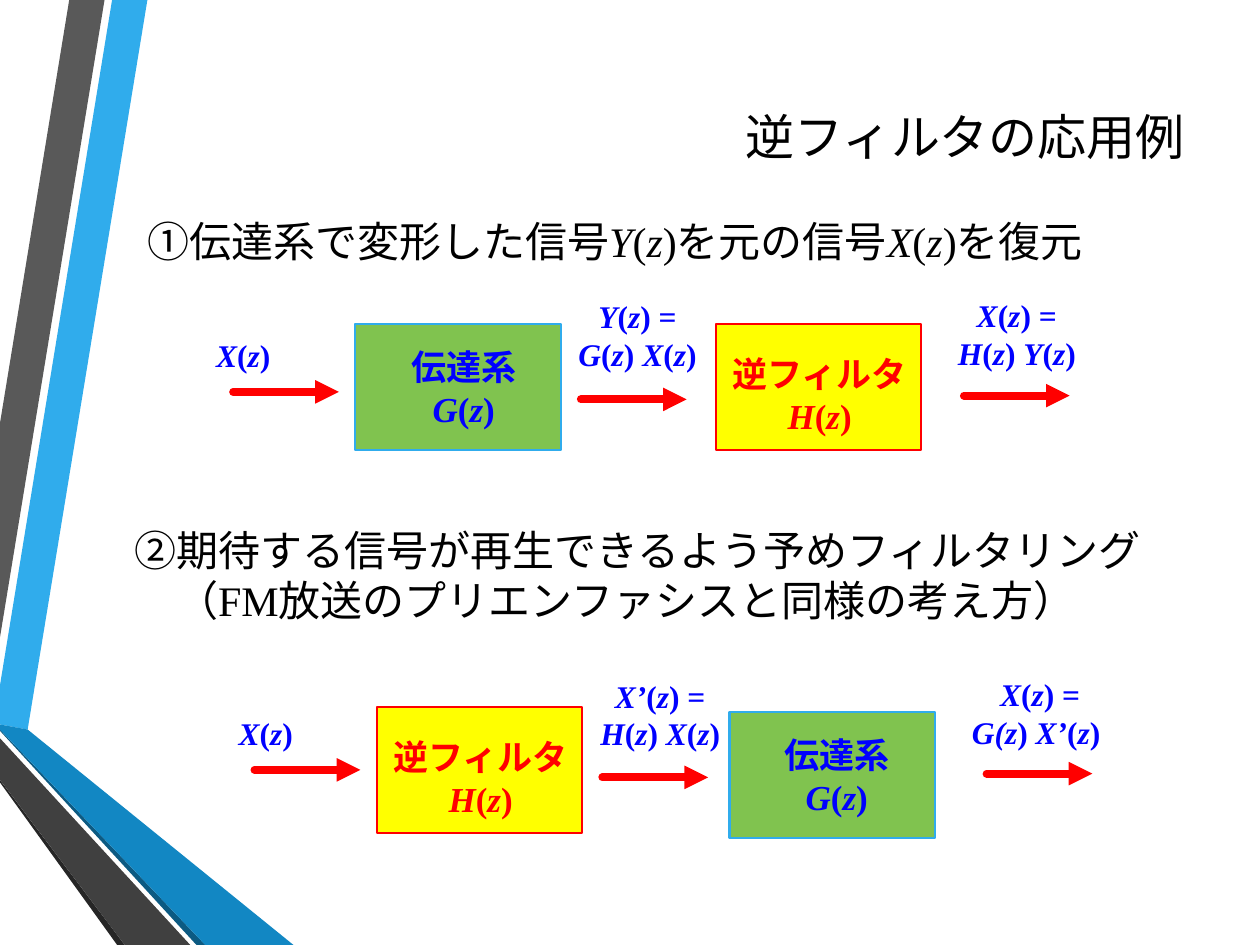
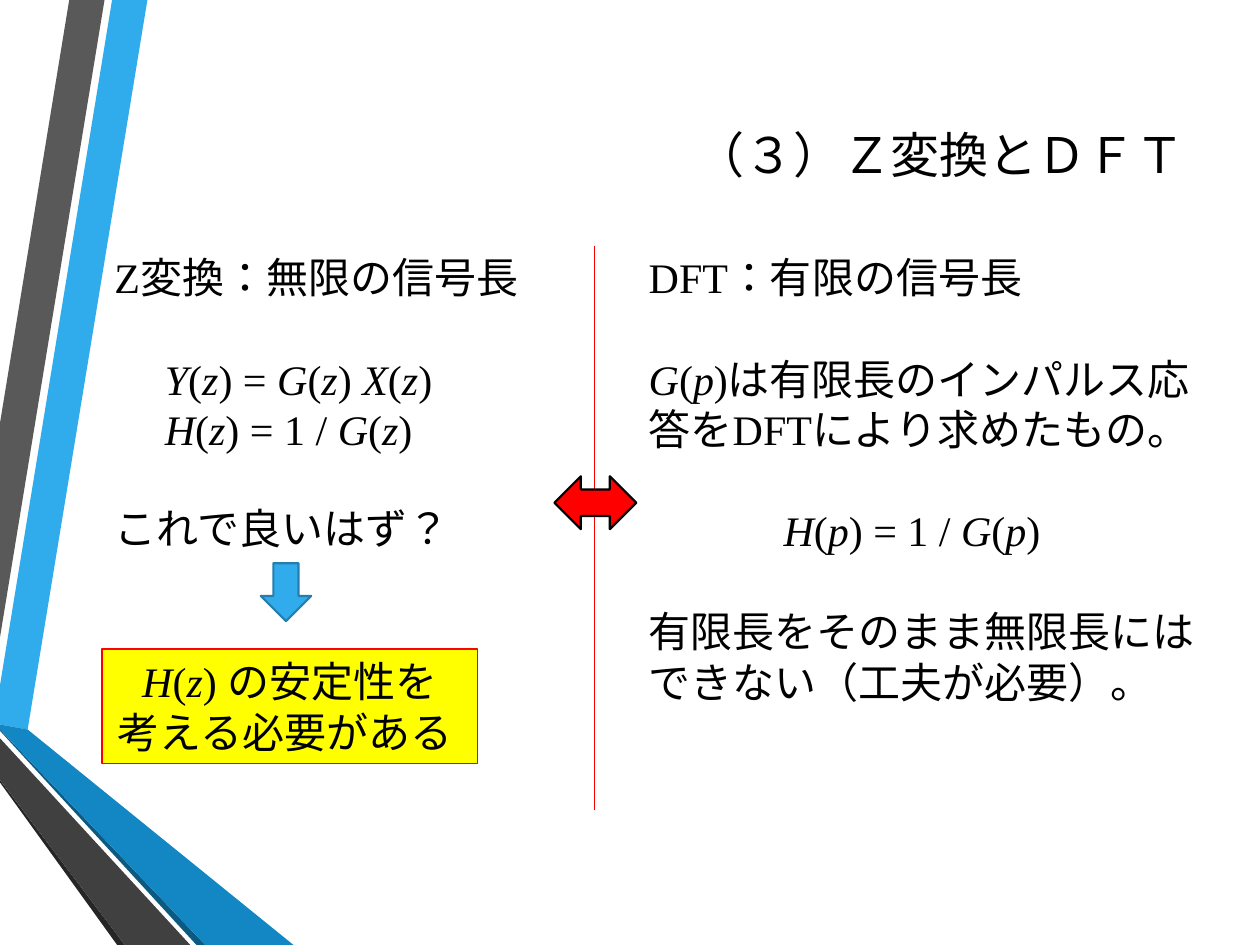
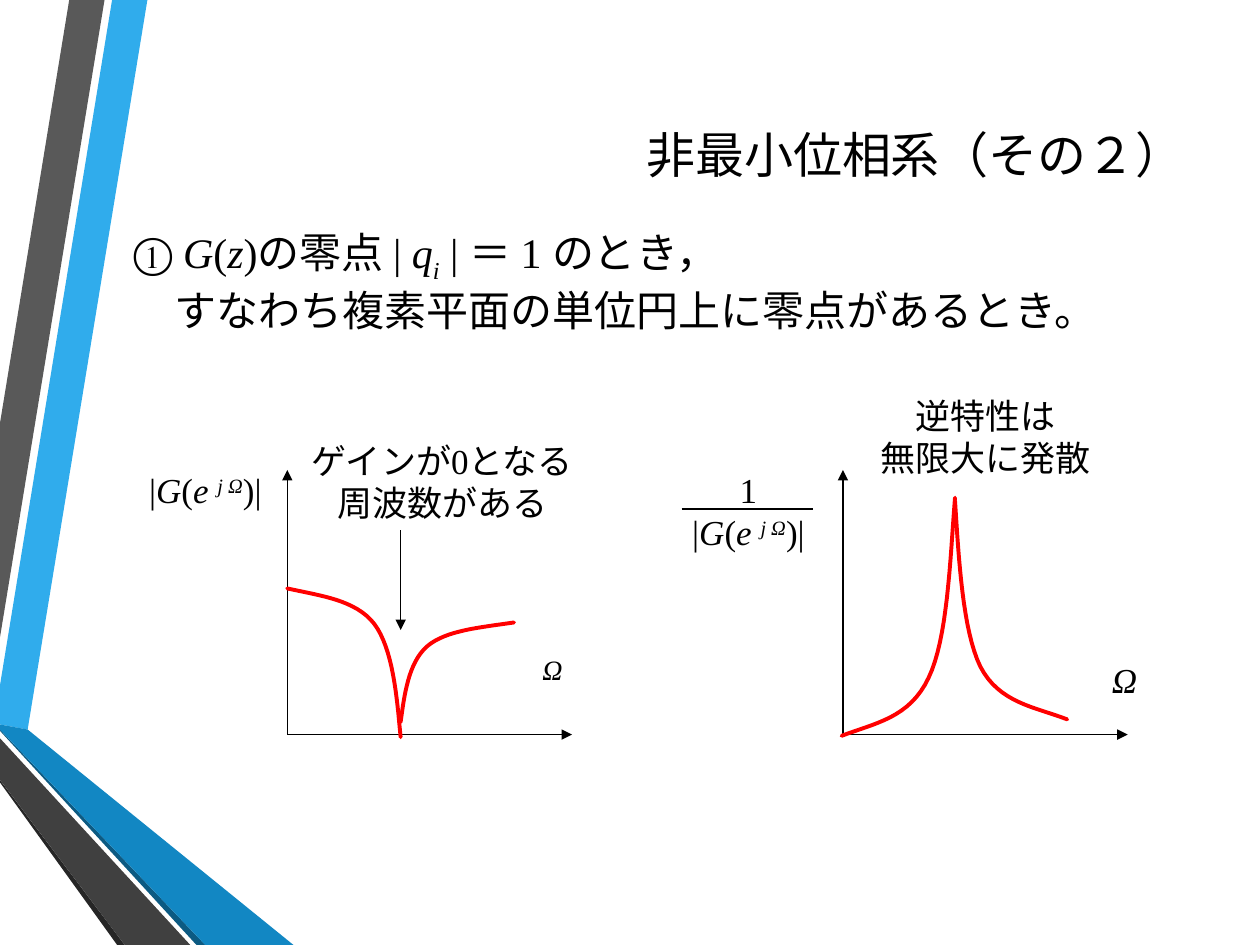
from itertools import pairwise
from typing import NamedTuple

from lxml.etree import SubElement
from pptx import Presentation
from pptx.dml.color import RGBColor
from pptx.enum.lang import MSO_LANGUAGE_ID as Language
from pptx.enum.shapes import MSO_CONNECTOR as Connector, MSO_SHAPE as Preset
from pptx.enum.text import MSO_ANCHOR as Anchor, PP_ALIGN as Align
from pptx.oxml.ns import qn
from pptx.util import Inches, Pt

COLORS = {
    "black": "000000", "blue": "0000FF", "red": "FF0000", "yellow": "FFFF00",
    "green": "80C34F", "sky": "30ACEC", "steel": "247FAF", "ocean": "1287C3",
    "navy": "0C5A82", "gray": "595959", "dark gray": "404040", "soot": "262626",
}
COLORS = {name: RGBColor.from_string(value) for name, value in COLORS.items()}


class Style(NamedTuple):
    size: int
    color: str = "black"
    align: Align = Align.CENTER
    bold: bool = False
    inset: float = 0.1
    font: str = "Times New Roman"
    anchor: Anchor = Anchor.TOP


STYLES = {
    "title": Style(28, align=Align.RIGHT, font="Calibri", anchor=Anchor.MIDDLE),
    "serif title": Style(28, align=Align.RIGHT, anchor=Anchor.MIDDLE),
    "body": Style(24, align=Align.LEFT),
    "callout": Style(24, anchor=Anchor.MIDDLE),
    "signal": Style(18, "blue", bold=True, inset=0),
    "system": Style(20, "blue", bold=True, inset=0),
    "inverse": Style(20, "red", bold=True, inset=0),
    "plot": Style(20),
    "small plot": Style(16),
}

BANDS = [
    ("sky", [(0, 5.44), (0, 5.75), (0.22, 5.79), (1.17, 0), (0.89, 0)]),
    ("gray", [(0.83, 0), (0.55, 0), (0, 3.36), (0, 5.06)]),
    ("soot", [(0, 6.19), (0, 6.21), (0.93, 7.5), (0.99, 7.5)]),
    ("navy", [(0, 5.79), (0, 5.8), (1.56, 7.5), (1.63, 7.5)]),
    ("ocean", [(0, 5.79), (1.63, 7.5), (2.33, 7.5), (0.22, 5.79), (0, 5.75)]),
    ("dark gray", [(0, 6.19), (0.99, 7.5), (1.51, 7.5), (0, 5.86)]),
]


def write(box, style_name, lines):
    """Fill box. *...* is italic, *^...* superscript, *_...* subscript.

    A line is a string, or (string, indent in inches, points before).
    """
    style = STYLES[style_name]
    frame = box.text_frame
    frame.word_wrap = True
    frame.vertical_anchor = style.anchor
    frame.margin_left = frame.margin_right = Inches(style.inset)
    frame.margin_top = frame.margin_bottom = Inches(style.inset / 2)
    for index, line in enumerate(lines):
        text, indent, before = line if isinstance(line, tuple) else (line, 0, 0)
        para = frame.add_paragraph() if index else frame.paragraphs[0]
        para.alignment = style.align
        para.space_before = Pt(before)
        para._p.get_or_add_pPr().set("marL", str(Inches(indent)))
        for number, piece in enumerate(text.split("*")):
            if not piece:
                continue
            span = para.add_run()
            span.text = piece.lstrip("^_")
            font = span.font
            font.name, font.size, font.bold = style.font, Pt(style.size), style.bold
            font.italic = number % 2 == 1
            font.color.rgb = COLORS[style.color]
            font.language_id = Language.JAPANESE
            if piece[0] in "^_":
                baseline = "30000" if piece[0] == "^" else "-25000"
                span._r.get_or_add_rPr().set("baseline", baseline)


def outline(page, points, close):
    """Add a freeform through points given in inches."""
    points = [(Inches(x), Inches(y)) for x, y in points]
    builder = page.shapes.build_freeform(*points[0], scale=1)
    builder.add_line_segments(points[1:], close=close)
    shape = builder.convert_to_shape()
    shape.shadow.inherit = False
    return shape


# Lines: start x, start y, end x, end y, colour, width, arrowhead
signal_arrows = [
    (x, y, x + 0.84, y, "red", 4.5, True)
    for x, y in [(1.85, 3.11), (4.61, 3.17), (7.65, 3.14),
                 (2.02, 6.11), (4.78, 6.17), (7.83, 6.14)]
]
plot_axes = [
    (x, 5.83, x + across, 5.83 - up, "black", 0.75, True)
    for x in (2.28, 6.69) for across, up in [(2.26, 0), (0, 2.1)]
]

SLIDES = [
    {
        "lines": signal_arrows,
        "blocks": [
            (Preset.RECTANGLE, (x, y, 1.63, 1), fill, line, 1.25, [])
            for x, y, fill, line in [
                (2.82, 2.57, "green", "sky"), (5.68, 2.57, "yellow", "red"),
                (5.79, 5.65, "green", "sky"), (2.99, 5.61, "yellow", "red")]
        ],
        "curves": [],
        "texts": [
            ("title", (2.28, 0.5, 7.22, 1.16), ["逆フィルタの応用例"]),
            ("body", (1.07, 1.66, 8.43, 0.5),
             ["①伝達系で変形した信号*Y*(*z*)を元の信号*X*(*z*)を復元"]),
            ("system", (3.09, 2.74, 1.18, 0.67), ["伝達系", "*G*(*z*)"]),
            ("inverse", (5.79, 2.8, 1.43, 0.67), ["逆フィルタ", "*H*(*z*)"]),
            ("signal", (1.25, 2.67, 1.36, 0.3), ["*X*(*z*)"]),
            ("signal", (4.38, 2.36, 1.36, 0.61),
             ["*Y*(*z*) =", "*G*(*z*) *X*(*z*)"]),
            ("signal", (7.39, 2.35, 1.36, 0.61),
             ["*X*(*z*) =", "*H*(*z*) *Y*(*z*)"]),
            ("body", (0.97, 4.11, 8.43, 0.91),
             ["②期待する信号が再生できるよう予めフィルタリング",
              ("（FM放送のプリエンファシスと同様の考え方）", 0.33, 0)]),
            ("inverse", (3.1, 5.84, 1.43, 0.67), ["逆フィルタ", "*H*(*z*)"]),
            ("system", (6.05, 5.82, 1.18, 0.67), ["伝達系", "*G*(*z*)"]),
            ("signal", (1.43, 5.67, 1.36, 0.3), ["*X*(*z*)"]),
            ("signal", (4.56, 5.37, 1.36, 0.61),
             ["*X’*(*z*) =", "*H*(*z*) *X*(*z*)"]),
            ("signal", (7.57, 5.36, 1.37, 0.61),
             ["*X*(*z*) =", "*G(z*) *X’*(*z*) "]),
        ],
    },
    {
        "lines": [(4.72, 1.95, 4.72, 6.43, "red", 0.75, False)],
        "blocks": [
            (Preset.RECTANGLE, (0.81, 5.15, 2.98, 0.91), "yellow", "red", 0.75,
             ["*H*(*z*) の安定性を", "考える必要がある "]),
            (Preset.DOWN_ARROW, (2.07, 4.47, 0.4, 0.46), "sky", "steel", 1.25, []),
            (Preset.LEFT_RIGHT_ARROW, (4.4, 3.78, 0.65, 0.42),
             "red", "black", 1.25, []),
        ],
        "curves": [],
        "texts": [
            ("title", (1.07, 0.5, 8.43, 1.45), ["（３）Ｚ変換とＤＦＴ"]),
            ("body", (0.81, 1.95, 3.59, 2.52),
             ["Z変換：無限の信号長",
              ("*Y*(*z*) = *G*(*z*)* X*(*z*)", 0.4, 29),
              ("*H*(*z*) = 1 /* G*(*z*)", 0.4, 0),
              ("これで良いはず？", 0, 28)]),
            ("body", (5.05, 1.95, 4.82, 4.14),
             ["DFT：有限の信号長",
              ("*G*(*p*)は有限長のインパルス応答をDFTにより求めたもの。", 0, 29),
              ("*H*(*p*) = 1 / *G*(*p*)", 1.07, 29),
              ("有限長をそのまま無限長にはできない（工夫が必要）。", 0, 29)]),
        ],
    },
    {
        "lines": plot_axes + [
            (3.18, 4.21, 3.18, 5, "black", 0.75, True),
            (5.41, 4.04, 6.45, 4.04, "black", 0.75, False),
        ],
        "blocks": [],
        # Bezier chains: a start, then two controls and an end per segment
        "curves": [
            [(2.28, 4.67), (2.55, 4.73), (2.82, 4.76), (2.97, 4.95),
             (3.12, 5.15), (3.15, 5.53), (3.18, 5.85)],
            [(4.08, 4.94), (3.82, 4.98), (3.54, 5), (3.39, 5.13),
             (3.24, 5.26), (3.21, 5.52), (3.18, 5.73)],
            [(6.68, 5.84), (6.94, 5.74), (7.22, 5.7), (7.37, 5.38),
             (7.52, 5.07), (7.54, 4.46), (7.58, 3.95)],
            [(8.47, 5.71), (8.21, 5.61), (7.93, 5.58), (7.78, 5.29),
             (7.64, 5), (7.61, 4.44), (7.58, 3.98)],
        ],
        "texts": [
            ("serif title", (1.07, 0.5, 8.43, 1.45), ["非最小位相系（その２）"]),
            ("body", (0.96, 1.75, 8.54, 0.91),
             ["① *G*(*z*)の零点 | *q**_i* | ＝ 1 のとき，",
              ("すなわち複素平面の単位円上に零点があるとき。", 0.33, 0)]),
            ("plot", (2.29, 3.44, 2.44, 0.77), ["ゲインが0となる", "周波数がある"]),
            ("small plot", (3.94, 5.13, 0.89, 0.62), ["*Ω*"]),
            ("plot", (0.96, 3.67, 1.34, 0.44), ["|*G*(*e **^j Ω*)|"]),
            ("plot", (8.48, 5.18, 0.89, 0.44), ["*Ω*"]),
            ("plot", (5.04, 3.67, 1.8, 0.77), ["1", "|*G*(*e **^j Ω*)|"]),
            ("plot", (6.6, 3.08, 2.44, 0.77), ["逆特性は", "無限大に発散"]),
        ],
    },
]

deck = Presentation()
deck.slide_width, deck.slide_height = Inches(10), Inches(7.5)

for content in SLIDES:
    page = deck.slides.add_slide(deck.slide_layouts[6])

    for color, points in BANDS:
        band = outline(page, points, close=True)
        band.fill.solid()
        band.fill.fore_color.rgb = COLORS[color]
        band.line.fill.background()

    for *ends, color, width, arrowhead in content["lines"]:
        line = page.shapes.add_connector(Connector.STRAIGHT, *map(Inches, ends))
        line.line.color.rgb = COLORS[color]
        line.line.width = Pt(width)
        stroke = line.line._get_or_add_ln()
        if width > 1:
            stroke.set("cap", "rnd")
        if arrowhead:
            SubElement(stroke, qn("a:tailEnd"), type="triangle")
        SubElement(line._element.spPr, qn("a:effectLst"))

    for preset, place, fill, edge, width, lines in content["blocks"]:
        block = page.shapes.add_shape(preset, *map(Inches, place))
        block.shadow.inherit = False
        block.fill.solid()
        block.fill.fore_color.rgb = COLORS[fill]
        block.line.color.rgb = COLORS[edge]
        block.line.width = Pt(width)
        if lines:
            write(block, "callout", lines)

    for chain in content["curves"]:
        points = [chain[0]]
        for first, last in pairwise(range(0, len(chain), 3)):
            segment = chain[first:last + 1]
            for step in range(1, 17):
                t = step / 16
                weights = ((1 - t) ** 3, 3 * t * (1 - t) ** 2,
                           3 * t ** 2 * (1 - t), t ** 3)
                points.append(tuple(
                    sum(w * value for w, value in zip(weights, axis))
                    for axis in zip(*segment)))
        curve = outline(page, points, close=False)
        curve.fill.background()
        curve.line.color.rgb = COLORS["red"]
        curve.line.width = Pt(2.25)
        curve.line._get_or_add_ln().set("cap", "rnd")

    for style_name, place, lines in content["texts"]:
        box = page.shapes.add_textbox(*map(Inches, place))
        write(box, style_name, lines)

deck.save("out.pptx")
